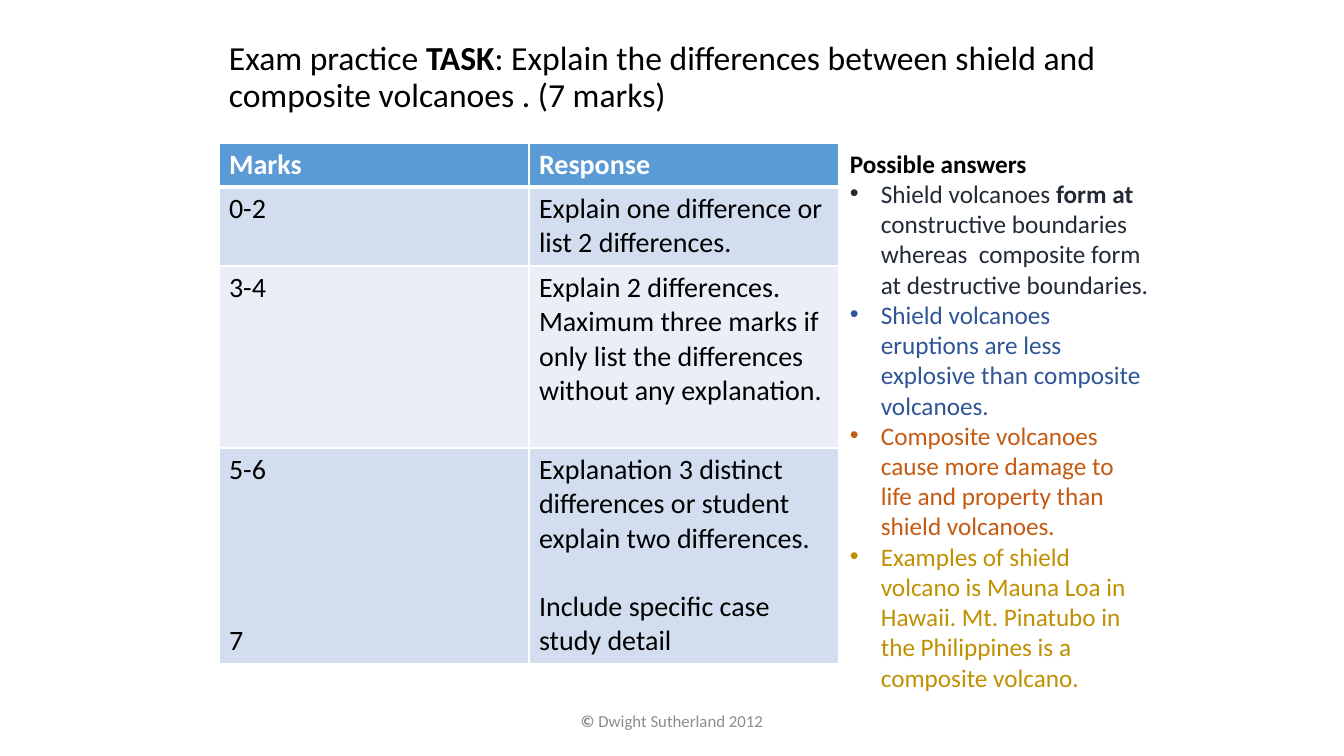
import pptx
import pptx.dml.color
import pptx.enum.text
import pptx.oxml
import pptx.oxml.ns
import pptx.util

COLORS = {
    "black": "000000", "white": "FFFFFF", "header": "5B9BD5",
    "band_dark": "D2DEEF", "band_light": "EAEFF7", "navy": "222A35",
    "blue": "2F5597", "orange": "C55A11", "gold": "BF9000", "gray": "8C8C8C",
}
ANCHOR = pptx.enum.text.MSO_ANCHOR
ALIGN = pptx.enum.text.PP_ALIGN


def rgb(name):
    return pptx.dml.color.RGBColor.from_string(COLORS[name])


def px(n):
    return pptx.util.Emu(round(n * 914400 / 100.8))


def add_text(p, text, size=20, color="black", bold=False):
    r = p.add_run()
    r.text = text
    r.font.name = "Calibri"
    r.font.size = pptx.util.Pt(size)
    r.font.bold = bold
    r.font.color.rgb = rgb(color)


class Deck:
    """Holds the presentation, its current slide and the shared style."""

    def __init__(self, width, height):
        self.prs = pptx.Presentation()
        self.prs.slide_width, self.prs.slide_height = px(width), px(height)
        self.s = self.prs.slides.add_slide(self.prs.slide_layouts[6])

    def text(self, box, paragraphs, size, anchor=ANCHOR.TOP, align=ALIGN.LEFT, spacing=1.0):
        sp = self.s.shapes.add_textbox(*map(px, box))
        tf = sp.text_frame
        tf.word_wrap = True
        tf.vertical_anchor = anchor
        for i, (color, bullet, runs) in enumerate(paragraphs):
            p = tf.add_paragraph() if i else tf.paragraphs[0]
            p.alignment = align
            p.line_spacing = spacing
            if bullet:
                self.bullet(p)
            for text, bold in runs:
                add_text(p, text, size=size, color=color, bold=bold)

    def bullet(self, p):
        pPr = p._p.get_or_add_pPr()
        pPr.set("marL", str(px(31)))
        pPr.set("indent", str(px(-31)))
        for tag, key, value in (("buFont", "typeface", "Arial"), ("buChar", "char", "•")):
            bu = pptx.oxml.parse_xml(f'<a:{tag} {pptx.oxml.ns.nsdecls("a")} {key}="{value}"/>')
            pPr.append(bu)

    def borders(self, cell, widths):
        tcPr = cell._tc.get_or_add_tcPr()
        for i, (side, width) in enumerate(widths.items()):
            ln = pptx.oxml.parse_xml(
                f'<a:ln{side} {pptx.oxml.ns.nsdecls("a")} w="{pptx.util.Pt(width)}"><a:solidFill>'
                f'<a:srgbClr val="{COLORS["white"]}"/></a:solidFill></a:ln{side}>')
            tcPr.insert(i, ln)

    def table(self, box, heights, fills, rows):
        sp = self.s.shapes.add_table(len(rows), len(rows[0]), *map(px, box))
        table = sp.table
        table.horz_banding = False
        for i, (height, fill, row) in enumerate(zip(heights, fills, rows)):
            table.rows[i].height = px(height)
            header = i == 0
            for j, paragraphs in enumerate(row):
                cell = table.cell(i, j)
                cell.fill.solid()
                cell.fill.fore_color.rgb = rgb(fill)
                self.borders(cell, {"L": 1, "R": 1, "T": 3 if i == 1 else 1, "B": 3 if header else 1})
                for k, (text, gap) in enumerate(paragraphs):
                    p = cell.text_frame.add_paragraph() if k else cell.text_frame.paragraphs[0]
                    p.space_before = pptx.util.Pt(gap)
                    add_text(p, text, color="white" if header else "black", bold=header)


def main():
    deck = Deck(1344, 756)
    title = [("Exam practice ", False), ("TASK", True),
             (": Explain the differences between shield and composite volcanoes . (7 marks)", False)]
    deck.text((219, 30, 907, 96), [("black", False, title)], 24, anchor=ANCHOR.MIDDLE, spacing=0.9)

    line = 24.4
    rows = [
        [[("Marks", 0)], [("Response", 0)]],
        [[("0-2", 0)], [("Explain one difference or list 2 differences.", 0)]],
        [[("3-4", 0)], [("Explain 2 differences. Maximum three marks if only list the differences "
                         "without any explanation.", 0)]],
        [[("5-6", 0), ("7", 4 * line)],
         [("Explanation 3 distinct differences or student explain two differences.", 0),
          ("Include specific case study detail", line)]],
    ]
    deck.table((219, 143, 620, 521), [44, 79, 182, 216],
               ["header", "band_dark", "band_light", "band_dark"], rows)

    answers = [
        ("black", False, [("Possible answers", True)]),
        ("navy", True, [("Shield volcanoes ", False), ("form at ", True),
                        ("constructive boundaries whereas  composite form at destructive boundaries.", False)]),
        ("blue", True, [("Shield volcanoes eruptions are less explosive than composite volcanoes.", False)]),
        ("orange", True, [("Composite volcanoes cause more damage to life and property than "
                           "shield volcanoes.", False)]),
        ("gold", True, [("Examples of shield volcano is Mauna Loa in Hawaii. Mt. Pinatubo in the "
                         "Philippines is a composite volcano.", False)]),
    ]
    deck.text((840, 143, 319, 591), answers, 18)

    footer = [("©", True), (" Dwight Sutherland 2012", False)]
    deck.text((445, 701, 454, 40), [("gray", False, footer)], 12, anchor=ANCHOR.MIDDLE, align=ALIGN.CENTER)
    deck.prs.save("out.pptx")


if __name__ == "__main__":
    main()
